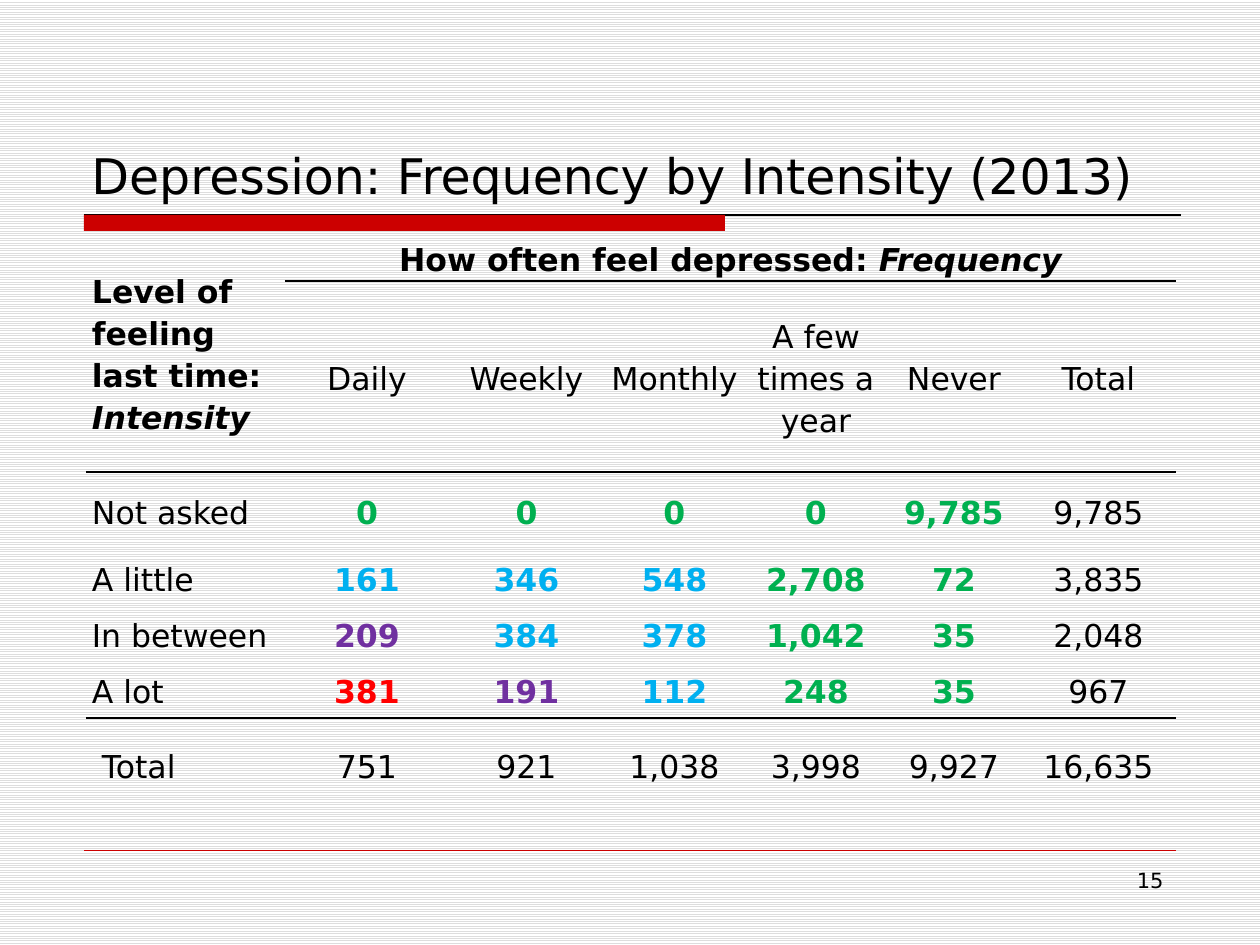
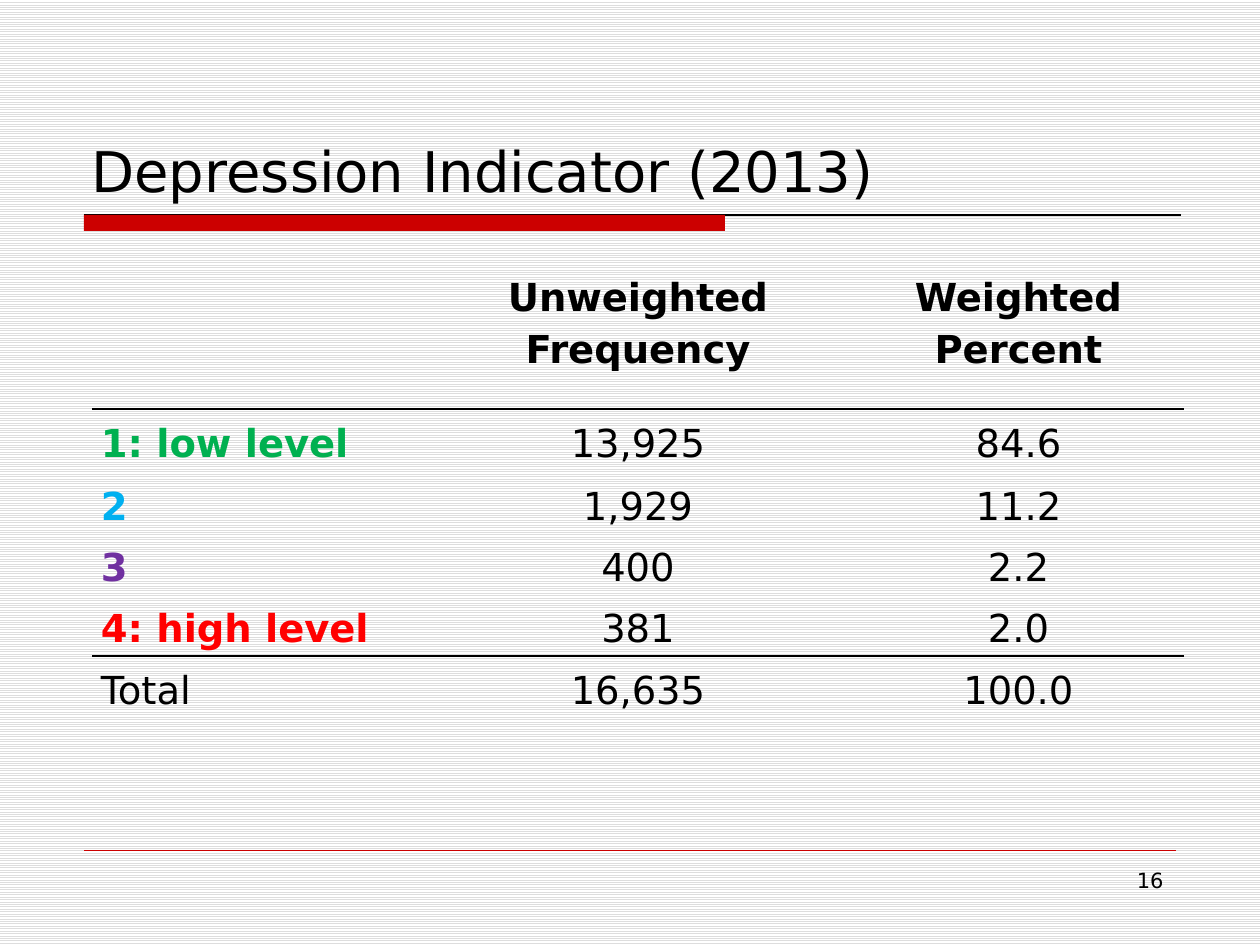
from lxml import etree
from pptx import Presentation
from pptx.dml.color import RGBColor
from pptx.enum import dml, shapes, text
from pptx.oxml import ns
from pptx.util import Pt

# Shared look
FONT = "DejaVu Sans"
HUES = {
    "black": "000000", "white": "FFFFFF", "stripe": "DDDDDD", "band": "CC0000",
    "green": "00B050", "blue": "00B0F0", "violet": "7030A0", "red": "FF0000",
}
# One letter per table cell: colour and bold
INKS = {
    "k": ("black", False), "K": ("black", True), "g": ("green", True),
    "b": ("blue", True), "v": ("violet", True), "r": ("red", True),
}
NO_GRID = "{2D5ABB26-0587-4C30-8999-92F81FD0307C}"

# Content: each row is its cells and their inks; a pair ends in italics
PAGES = [
    {
        "title": "Depression: Frequency by Intensity (2013)", "size": 28, "num": 15,
        "at": (86, 234), "cols": [199, 164, 155, 141, 142, 134, 155],
        "tall": [47, 191, 78, 56, 56, 56, 95],
        "font": 18, "pad": 6, "ruled": [0, 1, 5],
        "spans": [(0, 0, 1, 0), (0, 1, 0, 6)],
        "rows": [
            ([("Level of feeling last time: ", "Intensity"),
              ("How often feel depressed: ", "Frequency")], "KK"),
            (["", "Daily", "Weekly", "Monthly", "A few times a year", "Never", "Total"],
             "kkkkkkk"),
            (["Not asked", "0", "0", "0", "0", "9,785", "9,785"], "kgggggk"),
            (["A little", "161", "346", "548", "2,708", "72", "3,835"], "kbbbggk"),
            (["In between", "209", "384", "378", "1,042", "35", "2,048"], "kvbbggk"),
            (["A lot", "381", "191", "112", "248", "35", "967"], "krvbggk"),
            ([" Total", "751", "921", "1,038", "3,998", "9,927", "16,635"], "kkkkkkk"),
        ],
    },
    {
        "title": "Depression Indicator (2013)", "size": 32, "num": 16,
        "at": (92, 233), "cols": [331, 430, 331],
        "tall": [176, 64, 61, 61, 61, 64],
        "font": 22, "pad": 9, "ruled": [0, 4], "spans": [],
        "rows": [
            (["", "Unweighted\nFrequency", "Weighted\nPercent"], "KKK"),
            (["1: low level", "13,925", "84.6"], "gkk"),
            (["2", "1,929", "11.2"], "bkk"),
            (["3", "400", "2.2"], "vkk"),
            (["4: high level", "381", "2.0"], "rkk"),
            (["Total", "16,635", "100.0"], "kkk"),
        ],
    },
]


def px(n):
    return round(n * 914400 / 126)


def hue(name):
    return RGBColor.from_string(HUES[name])


def style(run, size, ink="black", bold=False):
    font = run.font
    font.name, font.size, font.bold = FONT, Pt(size), bold
    font.color.rgb = hue(ink)


def label(slide, box, words, size, side, anchor):
    frame = slide.shapes.add_textbox(*map(px, box)).text_frame
    frame.word_wrap = True
    frame.vertical_anchor = anchor
    frame.text = words
    para = frame.paragraphs[0]
    para.alignment = side
    style(para.runs[0], size)


def rule(slide, left, right, y, ink, width):
    line = slide.shapes.add_connector(
        shapes.MSO_CONNECTOR.STRAIGHT, px(left), px(y), px(right), px(y))
    line.line.color.rgb = hue(ink)
    line.line.width = Pt(width)
    etree.SubElement(line._element.spPr, ns.qn("a:effectLst"))


def frame_page(slide, page):
    # Striped background
    fill = slide.background.fill
    fill.patterned()
    fill.pattern = dml.MSO_PATTERN.LIGHT_HORIZONTAL
    fill.fore_color.rgb = hue("stripe")
    fill.back_color.rgb = hue("white")
    # Band under the title, footer line
    rule(slide, 84, 1181, 215, "black", 0.75)
    band = slide.shapes.add_shape(
        shapes.MSO_SHAPE.RECTANGLE, *map(px, (84, 215, 641, 16)))
    band.shadow.inherit = False
    band.fill.solid()
    band.fill.fore_color.rgb = hue("band")
    band.line.fill.background()
    rule(slide, 84, 1176, 850, "band", 0.25)
    # Title and page number
    label(slide, (79, 42, 1102, 168), page["title"], page["size"],
          text.PP_ALIGN.LEFT, text.MSO_ANCHOR.BOTTOM)
    label(slide, (903, 861, 273, 66), str(page["num"]), 12,
          text.PP_ALIGN.RIGHT, text.MSO_ANCHOR.TOP)


def underline(cell):
    line = etree.Element(ns.qn("a:lnB"), w=str(Pt(1)))
    fill = etree.SubElement(line, ns.qn("a:solidFill"))
    etree.SubElement(fill, ns.qn("a:srgbClr"), val=HUES["black"])
    cell._tc.get_or_add_tcPr().insert(0, line)


def fill_cell(cell, words, ink, size, side):
    parts = words if isinstance(words, tuple) else (words,)
    cell.text_frame.text = parts[0]
    for part in parts[1:]:
        run = cell.text_frame.paragraphs[0].add_run()
        run.text = part
        run.font.italic = True
    for para in cell.text_frame.paragraphs:
        para.alignment = side
        para.line_spacing = 1.15
        for run in para.runs:
            style(run, size, *INKS[ink])


def add_grid(slide, page):
    cols, tall = page["cols"], page["tall"]
    box = (*page["at"], sum(cols), sum(tall))
    grid = slide.shapes.add_table(len(tall), len(cols), *map(px, box)).table
    grid.first_row = grid.horz_banding = False
    grid._tbl.tblPr.find(ns.qn("a:tableStyleId")).text = NO_GRID
    for col, wide in zip(grid.columns, cols):
        col.width = px(wide)
    for row, high in zip(grid.rows, tall):
        row.height = px(high)
    for top, left, low, right in page["spans"]:
        grid.cell(top, left).merge(grid.cell(low, right))
    # Plain cells, with rules under some rows
    for r in range(len(tall)):
        for c in range(len(cols)):
            cell = grid.cell(r, c)
            cell.fill.background()
            cell.vertical_anchor = text.MSO_ANCHOR.MIDDLE
            cell.margin_left = cell.margin_right = px(page["pad"])
            cell.margin_top = cell.margin_bottom = 0
            if r in page["ruled"]:
                underline(cell)
    # Words: first column to the left, the rest centred
    for r, (row, inks) in enumerate(page["rows"]):
        for c, (words, ink) in enumerate(zip(row, inks)):
            side = text.PP_ALIGN.CENTER if c else text.PP_ALIGN.LEFT
            if words:
                fill_cell(grid.cell(r, c), words, ink, page["font"], side)


def main():
    deck = Presentation()
    deck.slide_width, deck.slide_height = px(1260), px(945)
    for page in PAGES:
        slide = deck.slides.add_slide(deck.slide_layouts[6])
        frame_page(slide, page)
        add_grid(slide, page)
    deck.save("out.pptx")


if __name__ == "__main__":
    main()
